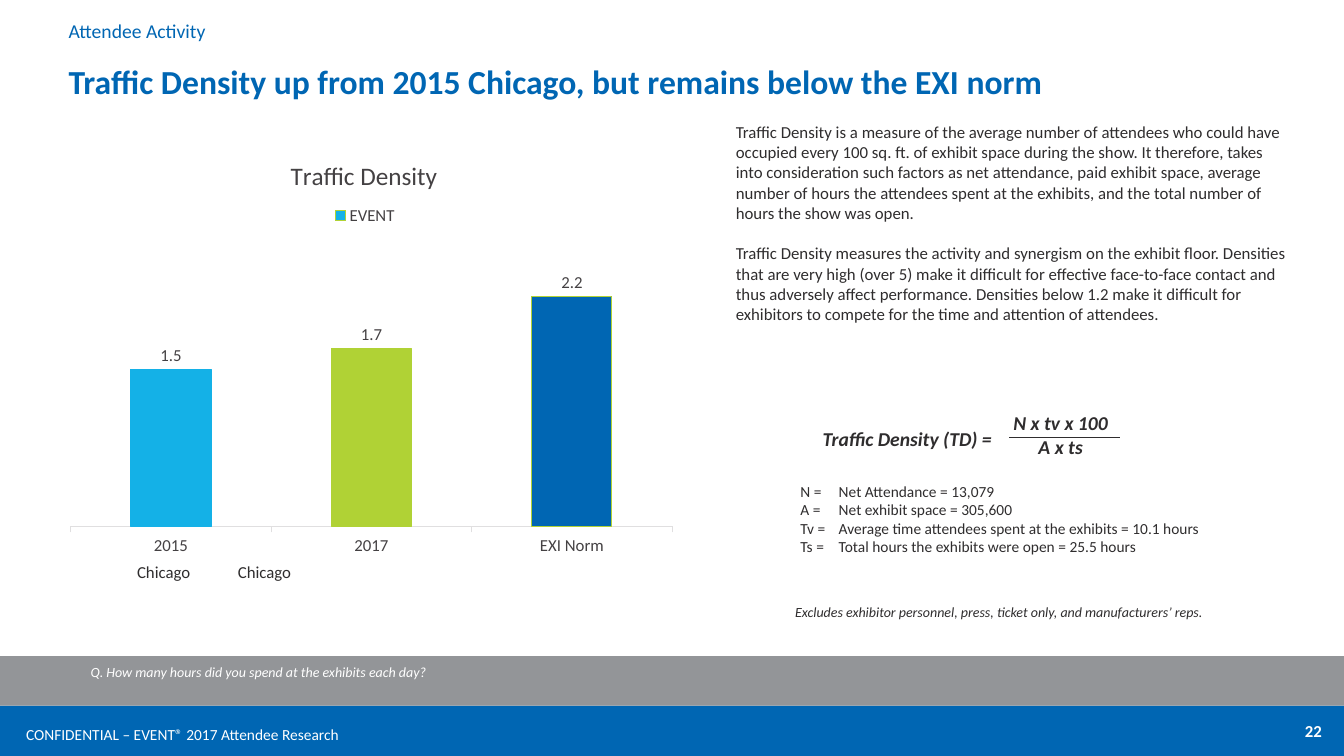
from dataclasses import dataclass
from typing import Optional

from lxml import etree
from pptx import Presentation
from pptx import util as u
from pptx.chart import data as chart_data
from pptx.dml import color
from pptx.enum import chart as charts, shapes, text
from pptx.oxml import ns

LEFT, CENTER, RIGHT = text.PP_ALIGN.LEFT, text.PP_ALIGN.CENTER, text.PP_ALIGN.RIGHT
TOP, MIDDLE, BOTTOM = text.MSO_ANCHOR.TOP, text.MSO_ANCHOR.MIDDLE, text.MSO_ANCHOR.BOTTOM


@dataclass(frozen=True)
class Theme:
    face: str = "Calibri"
    blue: str = "0066B3"
    sky: str = "14B1E7"
    lime: str = "B0D235"
    grey: str = "939598"
    ink: str = "2F2D2E"
    chart_ink: str = "444143"
    axis: str = "E0DFE0"
    white: str = "FFFFFF"
    headline: float = 24
    chart_title: float = 18
    section: float = 14
    body: float = 12
    detail: float = 11
    note: float = 10


THEME = Theme()


@dataclass(frozen=True)
class Box:
    left: float
    top: float
    width: float
    height: float

    def lengths(self) -> tuple:
        return tuple(u.Inches(v) for v in (self.left, self.top, self.width, self.height))


@dataclass(frozen=True)
class Copy:
    box: Box
    lines: tuple
    size: float
    ink: str = THEME.ink
    bold: bool = False
    italic: bool = False
    align: text.PP_ALIGN = LEFT
    anchor: text.MSO_ANCHOR = TOP
    gap: float = 0
    hanging: float = 0
    tab: Optional[float] = None
    insets: tuple = (0.1, 0.05, 0.1, 0.05)
    spacing: Optional[float] = None


@dataclass(frozen=True)
class Band:
    box: Box
    fill: str


@dataclass(frozen=True)
class Bar:
    category: str
    value: float
    fill: str
    outline: str


BANDS = (
    Band(Box(0, 7, 13.33, 0.5), THEME.blue),
    Band(Box(0, 6.51, 13.33, 0.49), THEME.grey),
)

HEADLINE = Copy(Box(0.58, 0.58, 12, 0.49),
                ("Traffic Density up from 2015 Chicago, but remains below the EXI norm",),
                THEME.headline, THEME.blue, bold=True, anchor=MIDDLE, spacing=0.9)
SECTION = Copy(Box(0.58, 0.14, 2.57, 0.35), ("Attendee Activity",),
               THEME.section, THEME.blue, anchor=MIDDLE, spacing=0.9)

COPIES = (
    Copy(Box(0.16, 7.14, 7.6, 0.29), ("CONFIDENTIAL – EVENT® 2017 Attendee Research",),
         THEME.detail, THEME.white),
    Copy(Box(10.21, 7.1, 3, 0.4), ("22",), THEME.body, THEME.white, bold=True, align=RIGHT),
    Copy(Box(0.8, 6.53, 11.27, 0.27),
         ("Q. How many hours did you spend at the exhibits each day?",),
         THEME.note, THEME.white, italic=True),
    Copy(Box(7.2, 1.16, 5.73, 2.12), (
        "Traffic Density is a measure of the average number of attendees who could have "
        "occupied every 100 sq. ft. of exhibit space during the show. It therefore, takes "
        "into consideration such factors as net attendance, paid exhibit space, average "
        "number of hours the attendees spent at the exhibits, and the total number of "
        "hours the show was open.",
        "Traffic Density measures the activity and synergism on the exhibit floor. Densities "
        "that are very high (over 5) make it difficult for effective face-to-face contact and "
        "thus adversely affect performance. Densities below 1.2 make it difficult for "
        "exhibitors to compete for the time and attention of attendees.",
    ), THEME.body, gap=14.6),
    Copy(Box(7.84, 4.73, 4.56, 0.89), (
        "N =\tNet Attendance = 13,079",
        "A =\tNet exhibit space = 305,600",
        "Tv =\tAverage time attendees spent at the exhibits = 10.1 hours",
        "Ts =\tTotal hours the exhibits were open = 25.5 hours",
    ), THEME.detail, hanging=0.38),
    Copy(Box(8.06, 3.94, 2.08, 0.61), ("Traffic Density (TD) =",), THEME.section,
         bold=True, italic=True, anchor=BOTTOM, insets=(0.1, 0.05, 0.1, 0.08)),
    Copy(Box(9.91, 4.03, 1.29, 0.69), ("N x tv x 100", "A x ts"), THEME.section,
         bold=True, italic=True, align=CENTER, insets=(0.05, 0.05, 0.12, 0.05)),
    Copy(Box(1.15, 5.52, 4.63, 0.3), ("Chicago\tChicago",), THEME.body,
         tab=1.92, insets=(0.21, 0.05, 0.1, 0.05)),
    Copy(Box(6.88, 5.94, 6.05, 0.27),
         ("Excludes exhibitor personnel, press, ticket only, and manufacturers’ reps.",),
         THEME.note, italic=True, align=CENTER),
)

BARS = (
    Bar("2015", 1.5, THEME.sky, THEME.sky),
    Bar("2017", 1.7, THEME.lime, THEME.lime),
    Bar("EXI Norm", 2.2, THEME.blue, THEME.lime),
)


def rgb(value: str) -> color.RGBColor:
    return color.RGBColor.from_string(value)


def set_font(font, size: float, ink: str, bold: bool = False, italic: bool = False) -> None:
    font.name, font.size, font.bold, font.italic = THEME.face, u.Pt(size), bold, italic
    font.color.rgb = rgb(ink)


def write(holder, copy: Copy) -> None:
    holder.left, holder.top, holder.width, holder.height = copy.box.lengths()
    frame = holder.text_frame
    frame.word_wrap = True
    frame.auto_size = text.MSO_AUTO_SIZE.NONE
    frame.vertical_anchor = copy.anchor
    frame.margin_left, frame.margin_top, frame.margin_right, frame.margin_bottom = (
        u.Inches(v) for v in copy.insets)
    for index, line in enumerate(copy.lines):
        paragraph = frame.paragraphs[0] if index == 0 else frame.add_paragraph()
        paragraph.text = line
        properties = paragraph._p.get_or_add_pPr()
        properties.set("marL", str(u.Inches(copy.hanging)))
        properties.set("indent", str(-u.Inches(copy.hanging)))
        etree.SubElement(properties, ns.qn("a:buNone"))
        if copy.tab is not None:
            stops = etree.SubElement(properties, ns.qn("a:tabLst"))
            etree.SubElement(stops, ns.qn("a:tab"), pos=str(u.Inches(copy.tab)), algn="l")
        paragraph.alignment = copy.align
        paragraph.space_before = u.Pt(copy.gap if index else 0)
        paragraph.line_spacing = copy.spacing
        set_font(paragraph.font, copy.size, copy.ink, copy.bold, copy.italic)


def draw_band(slide, band: Band) -> None:
    strip = slide.shapes.add_shape(shapes.MSO_SHAPE.RECTANGLE, *band.box.lengths())
    strip.shadow.inherit = False
    strip.fill.solid()
    strip.fill.fore_color.rgb = rgb(band.fill)
    strip.line.fill.background()


def draw_fraction_bar(slide) -> None:
    rule = slide.shapes.add_connector(shapes.MSO_CONNECTOR.STRAIGHT, u.Inches(10.01),
                                      u.Inches(4.34), u.Inches(11.11), u.Inches(4.34))
    rule.line.color.rgb = rgb(THEME.ink)
    rule.line.width = u.Pt(0.5)
    etree.SubElement(rule._element.spPr, ns.qn("a:effectLst"))


def place(parent, index: int, inner: bool = False, **fractions: float) -> None:
    for existing in parent.findall(ns.qn("c:layout")):
        parent.remove(existing)
    layout = etree.Element(ns.qn("c:layout"))
    manual = etree.SubElement(layout, ns.qn("c:manualLayout"))
    if inner:
        etree.SubElement(manual, ns.qn("c:layoutTarget"), val="inner")
    for mode in ("xMode", "yMode"):
        etree.SubElement(manual, ns.qn("c:" + mode), val="edge")
    for key, value in fractions.items():
        etree.SubElement(manual, ns.qn("c:" + key), val=str(value))
    parent.insert(index, layout)


def draw_density_chart(slide) -> None:
    data = chart_data.CategoryChartData(number_format="#,##0.0")
    data.categories = [bar.category for bar in BARS]
    data.add_series("EVENT", [bar.value for bar in BARS])
    chart = slide.shapes.add_chart(charts.XL_CHART_TYPE.COLUMN_CLUSTERED,
                                   *Box(0.45, 1.27, 6.28, 4.25).lengths(), data).chart
    set_font(chart.font, THEME.body, THEME.chart_ink)
    chart.has_title = True
    heading = chart.chart_title.text_frame
    heading.text = "Traffic Density"
    set_font(heading.paragraphs[0].font, THEME.chart_title, THEME.chart_ink)
    chart.has_legend = True
    chart.legend.position = charts.XL_LEGEND_POSITION.TOP
    chart.legend.include_in_layout = False
    set_font(chart.legend.font, THEME.body, THEME.chart_ink)

    values, categories = chart.value_axis, chart.category_axis
    values.visible = values.has_major_gridlines = False
    values.minimum_scale, values.maximum_scale = 0, 2.5
    categories.major_tick_mark = charts.XL_TICK_MARK.OUTSIDE
    categories.format.line.color.rgb = rgb(THEME.axis)
    categories.format.line.width = u.Pt(0.75)

    plot = chart.plots[0]
    plot.gap_width, plot.vary_by_categories, plot.has_data_labels = 150, False, True
    labels = plot.data_labels
    labels.show_value = True
    labels.number_format, labels.number_format_is_linked = "#,##0.0", False
    labels.position = charts.XL_LABEL_POSITION.OUTSIDE_END
    set_font(labels.font, THEME.body, THEME.chart_ink)
    series = plot.series[0]
    parts = [(series, THEME.sky, THEME.lime)]
    parts += [(series.points[i], bar.fill, bar.outline) for i, bar in enumerate(BARS)]
    for part, fill, outline in parts:
        part.format.fill.solid()
        part.format.fill.fore_color.rgb = rgb(fill)
        part.format.line.color.rgb = rgb(outline)
        part.format.line.width = u.Pt(0.75)

    root = chart.element.find(ns.qn("c:chart"))
    place(root.find(ns.qn("c:title")), 1, x=0.38, y=0.06)
    place(root.find(ns.qn("c:legend")), 1, x=0.44, y=0.17, w=0.13, h=0.07)
    place(root.find(ns.qn("c:plotArea")), 0, inner=True, x=0.04, y=0.32, w=0.95, h=0.61)


def main() -> None:
    deck = Presentation()
    deck.slide_width, deck.slide_height = u.Inches(13.33), u.Inches(7.5)
    slide = deck.slides.add_slide(deck.slide_layouts[1])
    for band in BANDS:
        draw_band(slide, band)
    write(slide.shapes.title, HEADLINE)
    write(slide.placeholders[1], SECTION)
    draw_density_chart(slide)
    for copy in COPIES:
        write(slide.shapes.add_textbox(*copy.box.lengths()), copy)
    draw_fraction_bar(slide)
    deck.save("out.pptx")


if __name__ == "__main__":
    main()
